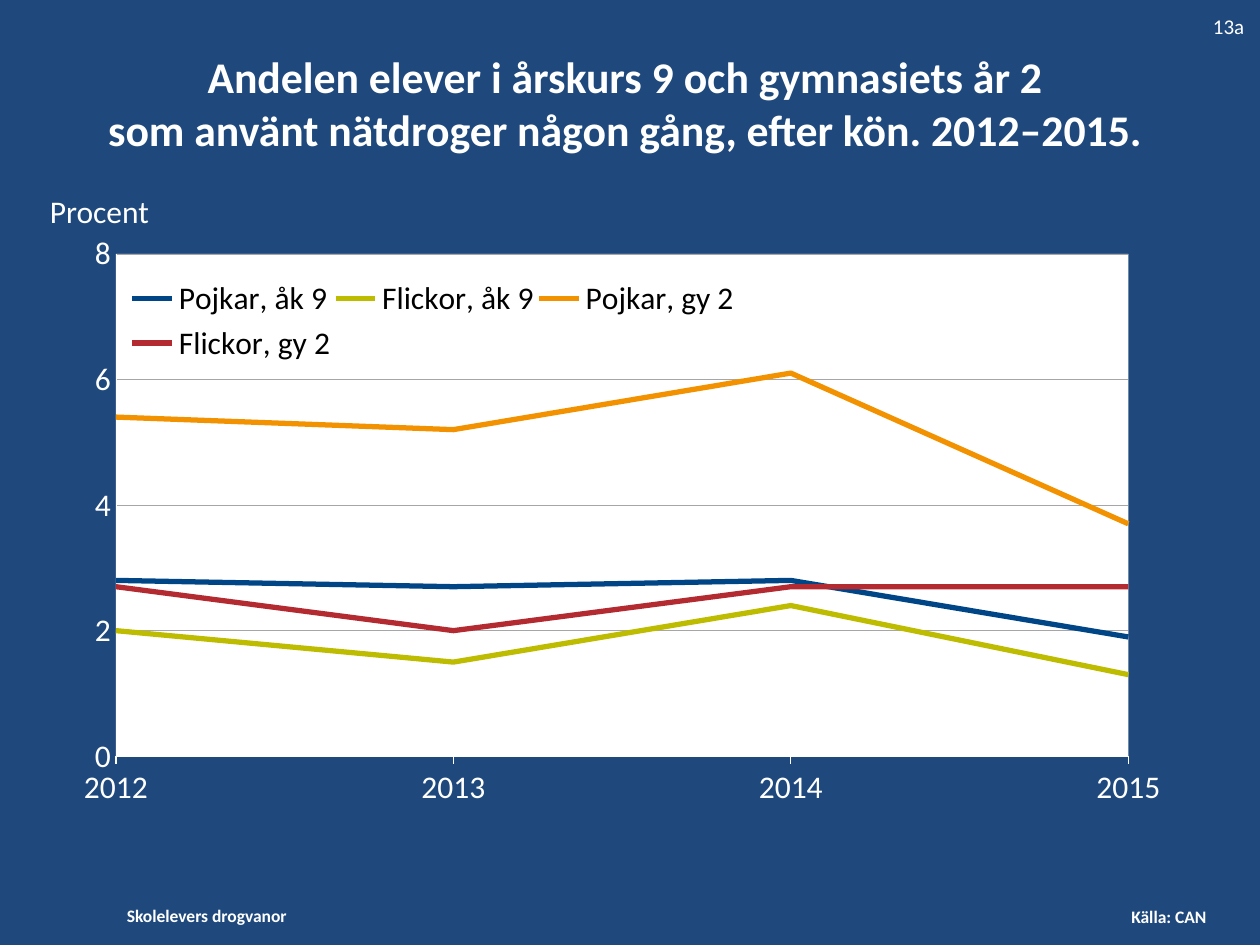
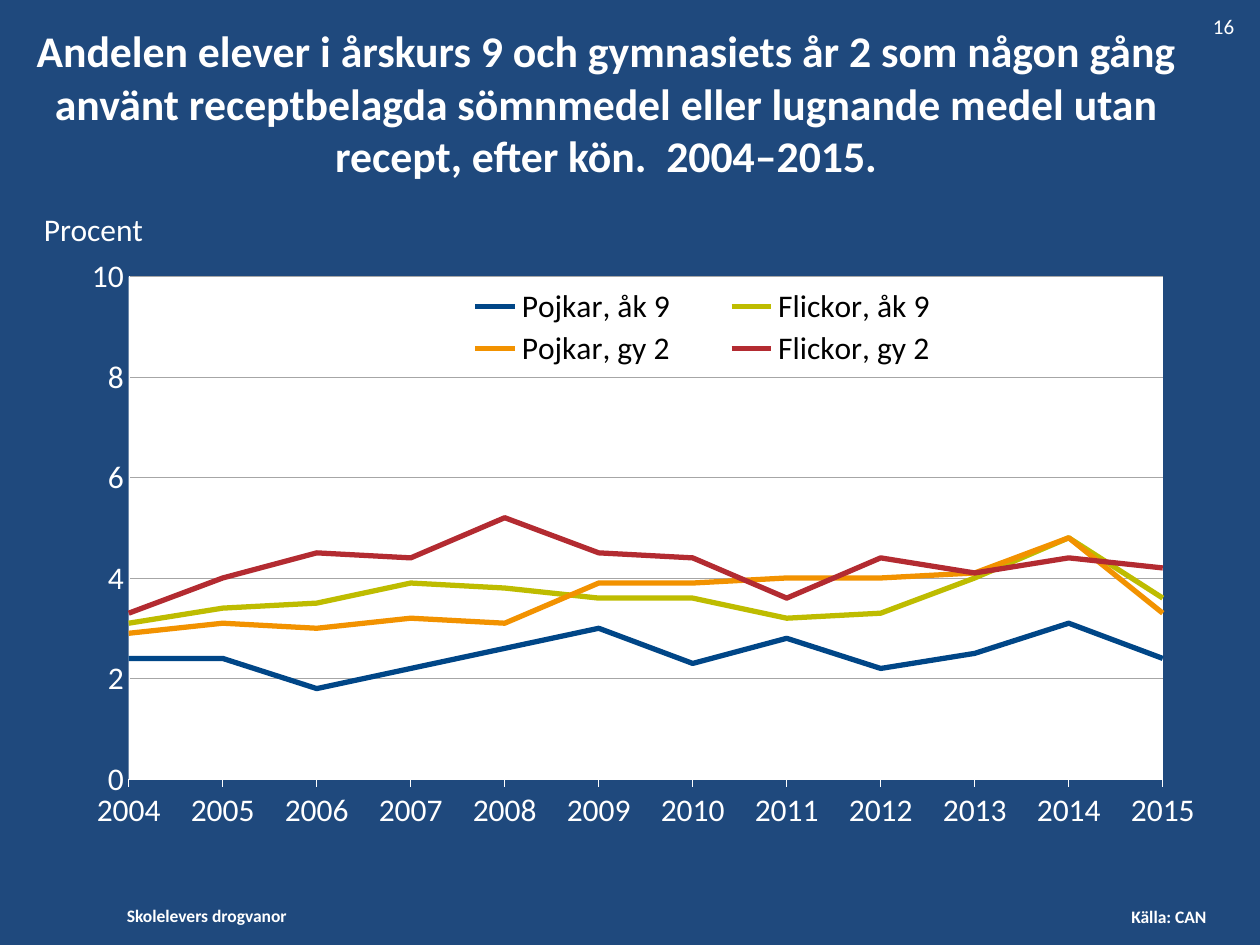
import pptx
import pptx.chart.data
import pptx.dml.color
import pptx.enum.chart
import pptx.enum.text
import pptx.oxml
import pptx.oxml.ns
import pptx.util

Pt = pptx.util.Pt
RGBColor = pptx.dml.color.RGBColor
qn = pptx.oxml.ns.qn
Anchor = pptx.enum.text.MSO_ANCHOR
Align = pptx.enum.text.PP_ALIGN
Tick = pptx.enum.chart.XL_TICK_MARK

NAVY = RGBColor(0x1F, 0x49, 0x7D)
WHITE = RGBColor(0xFF, 0xFF, 0xFF)
BLACK = RGBColor(0x00, 0x00, 0x00)
GRID_GREY = RGBColor(0xA6, 0xA6, 0xA6)
SERIES_COLOURS = {
    "Pojkar, åk 9": RGBColor(0x00, 0x46, 0x87),
    "Flickor, åk 9": RGBColor(0xBE, 0xBC, 0x00),
    "Pojkar, gy 2": RGBColor(0xF2, 0x92, 0x00),
    "Flickor, gy 2": RGBColor(0xB3, 0x2B, 0x31),
}
FONT = "Calibri"
PLOT_LAYOUT = (0.06, 0.09, 0.91, 0.79)  # fractions of the chart frame


def add_text(page, text, left, top, width, height, size=18, bold=False,
             align=Align.LEFT, anchor=Anchor.TOP, wrap=True):
    box = page.shapes.add_textbox(Pt(left), Pt(top), Pt(width), Pt(height))
    frame = box.text_frame
    frame.word_wrap = wrap
    frame.vertical_anchor = anchor
    para = frame.paragraphs[0]
    para.alignment = align
    para.text = text
    for span in para.runs:
        style_font(span.font, size, WHITE, bold)


def style_font(font, size, colour, bold=False):
    font.name = FONT
    font.size = Pt(size)
    font.bold = bold
    font.color.rgb = colour


def style_line(line, colour, width):
    line.color.rgb = colour
    line.width = Pt(width)


def make_layout(bounds, inner=False):
    """Manual layout element from left, top, width and height fractions."""
    target = '<c:layoutTarget val="inner"/>' if inner else ""
    modes = '<c:xMode val="edge"/><c:yMode val="edge"/>'
    sizes = "".join(f'<c:{tag} val="{value}"/>' for tag, value in zip("xywh", bounds))
    return pptx.oxml.parse_xml(
        f'<c:layout {pptx.oxml.ns.nsdecls("c")}><c:manualLayout>'
        f"{target}{modes}{sizes}</c:manualLayout></c:layout>")


def remove_children(element, tag):
    for child in element.findall(qn(tag)):
        element.remove(child)


def style_plot_area(chart):
    area = chart.plots[0]._element.getparent()
    remove_children(area, "c:layout")
    area.insert(0, make_layout(PLOT_LAYOUT, inner=True))
    remove_children(area, "c:spPr")
    area.append(pptx.oxml.parse_xml(
        f'<c:spPr {pptx.oxml.ns.nsdecls("c", "a")}><a:solidFill>'
        f'<a:srgbClr val="{WHITE}"/></a:solidFill></c:spPr>'))
    # Lines start and end on the plot edges
    value_axis = area.find(qn("c:valAx"))
    remove_children(value_axis, "c:crossBetween")
    crossing = value_axis.find(qn("c:crosses"))
    if crossing is None:
        crossing = value_axis.find(qn("c:crossAx"))
    crossing.addnext(pptx.oxml.parse_xml(
        f'<c:crossBetween {pptx.oxml.ns.nsdecls("c")} val="midCat"/>'))


def style_axes(chart, maximum):
    years, percent = chart.category_axis, chart.value_axis
    years.major_tick_mark = Tick.OUTSIDE
    percent.major_tick_mark = Tick.NONE
    for axis, width in ((years, 0.75), (percent, 0.23)):
        axis.minor_tick_mark = Tick.NONE
        style_font(axis.tick_labels.font, 18, WHITE)
        style_line(axis.format.line, WHITE, width)
    years.has_major_gridlines = False
    percent.minimum_scale, percent.maximum_scale = 0, maximum
    percent.major_unit = 2
    percent.has_major_gridlines = True
    style_line(percent.major_gridlines.format.line, GRID_GREY, 0.23)
    percent.tick_labels.number_format = "0"
    percent.tick_labels.number_format_is_linked = False


def style_legend(chart, bounds):
    chart.has_legend = True
    legend = chart.legend
    legend.position = pptx.enum.chart.XL_LEGEND_POSITION.TOP
    legend.include_in_layout = False
    style_font(legend.font, 18, BLACK)
    remove_children(legend._element, "c:layout")
    layout = make_layout(bounds)
    position = legend._element.find(qn("c:legendPos"))
    if position is None:
        legend._element.insert(0, layout)
    else:
        position.addnext(layout)


def add_line_chart(page, first_year, rows, bounds, maximum, legend_bounds):
    data = pptx.chart.data.CategoryChartData(number_format="0.0")
    data.categories = [str(first_year + index) for index in range(len(rows[0]))]
    for name, values in zip(SERIES_COLOURS, rows):
        data.add_series(name, values)
    chart = page.shapes.add_chart(
        pptx.enum.chart.XL_CHART_TYPE.LINE, *map(Pt, bounds), data).chart
    chart.has_title = False
    style_font(chart.font, 18, WHITE)
    chart.plots[0].vary_by_categories = False
    for series in chart.plots[0].series:
        series.smooth = False
        series.marker.style = pptx.enum.chart.XL_MARKER_STYLE.NONE
        style_line(series.format.line, SERIES_COLOURS[series.name], 3)
    style_axes(chart, maximum)
    style_legend(chart, legend_bounds)
    style_plot_area(chart)


def add_page(deck, title, title_left, title_width, number):
    """Page with background, title, page number and footers."""
    page = deck.slides.add_slide(deck.slide_layouts[6])
    page.background.fill.solid()
    page.background.fill.fore_color.rgb = NAVY
    add_text(page, "Skolelevers drogvanor", 65.4, 513.4, 120, 20,
             size=10, bold=True, wrap=False)
    add_text(page, "Källa: CAN", 639.4, 514, 67.7, 20, size=10, bold=True, wrap=False)
    add_text(page, title, title_left, 21.6, title_width, 74.2, size=25, bold=True,
             align=Align.CENTER, anchor=Anchor.MIDDLE)
    add_text(page, number, 686, 4.3, 34, 21.6, size=12, wrap=False)
    return page


def main():
    deck = pptx.Presentation()
    deck.slide_width, deck.slide_height = Pt(720), Pt(540)

    # Net drugs, 2012–2015
    page = add_page(
        deck, "Andelen elever i årskurs 9 och gymnasiets år 2\v"
        "som använt nätdroger någon gång, efter kön. 2012–2015.", 2.9, 708.5, "13a")
    net_drugs = [
        (2.8, 2.7, 2.8, 1.9),
        (2, 1.5, 2.4, 1.3),
        (5.4, 5.2, 6.1, 3.7),
        (2.7, 2, 2.7, 2.7),
    ]
    add_line_chart(page, 2012, net_drugs, (28.1, 112.3, 635.8, 363.6), 8,
                   (0.07, 0.12, 0.55, 0.15))
    add_text(page, "Procent", 21.4, 106, 84, 28.8, anchor=Anchor.MIDDLE)

    # Sedatives without prescription, 2004–2015
    page = add_page(
        deck, "Andelen elever i årskurs 9 och gymnasiets år 2 som någon gång "
        "använt receptbelagda sömnmedel eller lugnande medel utan recept, "
        "efter kön.  2004–2015.", 8.6, 675.4, "16")
    sedatives = [
        (2.4, 2.4, 1.8, 2.2, 2.6, 3, 2.3, 2.8, 2.2, 2.5, 3.1, 2.4),
        (3.1, 3.4, 3.5, 3.9, 3.8, 3.6, 3.6, 3.2, 3.3, 4, 4.8, 3.6),
        (2.9, 3.1, 3, 3.2, 3.1, 3.9, 3.9, 4, 4, 4.1, 4.8, 3.3),
        (3.3, 4, 4.5, 4.4, 5.2, 4.5, 4.4, 3.6, 4.4, 4.1, 4.4, 4.2),
    ]
    add_line_chart(page, 2004, sedatives, (34.6, 125.3, 649.4, 363.6), 10,
                   (0.32, 0.1, 0.49, 0.14))
    add_text(page, "Procent", 18, 116.6, 108, 28.8, anchor=Anchor.MIDDLE)

    deck.save("out.pptx")


if __name__ == "__main__":
    main()
